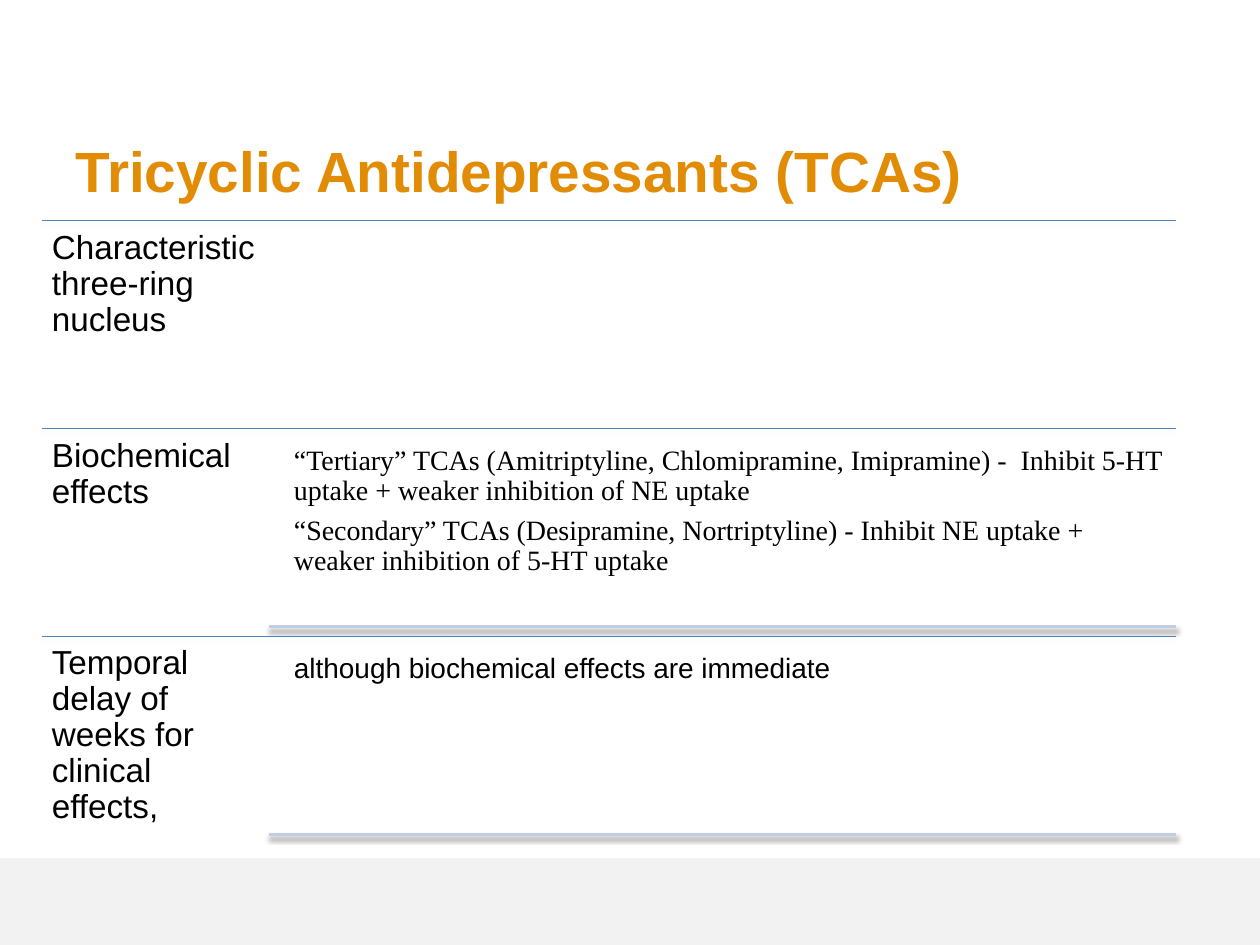
from dataclasses import dataclass
from lxml import etree
from pptx import Presentation
from pptx.dml.color import RGBColor
from pptx.enum.shapes import MSO_CONNECTOR, MSO_SHAPE
from pptx.enum.text import MSO_ANCHOR, MSO_AUTO_SIZE, PP_ALIGN
from pptx.oxml.ns import qn
from pptx.util import Pt

LINE, RECT = MSO_CONNECTOR.STRAIGHT, MSO_SHAPE.RECTANGLE
TOP, LEFT, FIXED = MSO_ANCHOR.TOP, PP_ALIGN.LEFT, MSO_AUTO_SIZE.NONE
SANS, SERIF = "Arial", "Times New Roman"
HUES = {"title": "E28C05", "text": "000000", "rule": "4F81BD",
        "soft": "C2CDE1", "band": "F2F2F2", "shade": "000000"}

# Grid, in points
WIDE, HIGH = 720, 540
START, END = 24, 672
FIRST, STEP = 126, 118.8
BODY, INDENT = 163.2, 153.6
DROP, TALL = 5.4, 107.8


@dataclass
class Row:
    label: str
    lines: tuple[str, ...] = ()
    font: str = SANS


@dataclass
class Rule:
    hue: str
    width: float
    alpha: int
    dist: float


@dataclass
class Style:
    size: float
    font: str
    inset: float


MAIN = Rule("rule", 0.75, 35, 1.8)
SUB = Rule("soft", 2, 38, 1.6)
ROWS = [
    Row("Characteristic three-ring nucleus"),
    Row("Biochemical effects", (
        "“Tertiary” TCAs (Amitriptyline, Chlomipramine, Imipramine) -  "
        "Inhibit 5-HT uptake + weaker inhibition of NE uptake",
        "“Secondary” TCAs (Desipramine, Nortriptyline) - "
        "Inhibit NE uptake + weaker inhibition of 5-HT uptake"), SERIF),
    Row("Temporal delay of weeks for clinical effects,",
        ("although biochemical effects are immediate",)),
]


def tint(name: str) -> RGBColor:
    return RGBColor.from_string(HUES[name])


def add_rule(slide, x: float, y: float, rule: Rule) -> None:
    line = slide.shapes.add_connector(LINE, Pt(x), Pt(y), Pt(END), Pt(y))
    line.line.color.rgb = tint(rule.hue)
    line.line.width = Pt(rule.width)
    # Soft shadow straight below
    fx = etree.SubElement(line._element.spPr, qn("a:effectLst"))
    shade = etree.SubElement(
        fx, qn("a:outerShdw"), blurRad=str(Pt(3.1)),
        dist=str(Pt(rule.dist)), dir="5400000", rotWithShape="0")
    color = etree.SubElement(shade, qn("a:srgbClr"), val=HUES["shade"])
    etree.SubElement(color, qn("a:alpha"), val=str(rule.alpha * 1000))


def add_text(slide, x: float, y: float, w: float, h: float,
             lines: tuple[str, ...], style: Style) -> None:
    frame = slide.shapes.add_textbox(Pt(x), Pt(y), Pt(w), Pt(h)).text_frame
    frame.word_wrap = True
    frame.vertical_anchor = TOP
    frame.margin_left = frame.margin_right = Pt(style.inset)
    frame.margin_top = frame.margin_bottom = Pt(style.inset)
    for i, words in enumerate(lines):
        para = frame.add_paragraph() if i else frame.paragraphs[0]
        para.line_spacing = 0.9
        para.space_after = Pt(0.35 * style.size)
        run = para.add_run()
        run.text = words
        run.font.size, run.font.name = Pt(style.size), style.font
        run.font.color.rgb = tint("text")


def add_row(slide, y: float, row: Row) -> None:
    add_rule(slide, START, y, MAIN)
    add_text(slide, START, y, 129.6, STEP, (row.label,), Style(19, SANS, 5.7))
    if row.lines:
        add_text(slide, BODY, y + DROP, END - BODY, TALL, row.lines,
                 Style(16, row.font, 4.8))
        add_rule(slide, INDENT, y + DROP + TALL, SUB)


def add_title(slide, words: str) -> None:
    title = slide.shapes.title
    title.left, title.top = Pt(36), Pt(69.8)
    title.width, title.height = Pt(648), Pt(42)
    frame = title.text_frame
    frame.auto_size = FIXED
    frame.vertical_anchor = TOP
    frame.margin_top, frame.margin_bottom = Pt(7.7), Pt(0)
    para = frame.paragraphs[0]
    para.alignment = LEFT
    run = para.add_run()
    run.text = words
    run.font.size, run.font.name, run.font.bold = Pt(32.4), SANS, True
    run.font.color.rgb = tint("title")


def add_band(slide) -> None:
    top = 490.3
    band = slide.shapes.add_shape(RECT, 0, Pt(top), Pt(WIDE), Pt(HIGH - top))
    band.shadow.inherit = False
    band.fill.solid()
    band.fill.fore_color.rgb = tint("band")
    band.line.fill.background()


def main() -> None:
    deck = Presentation()
    deck.slide_width, deck.slide_height = Pt(WIDE), Pt(HIGH)
    slide = deck.slides.add_slide(deck.slide_layouts[5])
    # Footer band, heading, then the ruled rows
    add_band(slide)
    add_title(slide, "Tricyclic Antidepressants (TCAs)")
    for i, row in enumerate(ROWS):
        add_row(slide, FIRST + i * STEP, row)
    deck.save("out.pptx")


if __name__ == "__main__":
    main()
